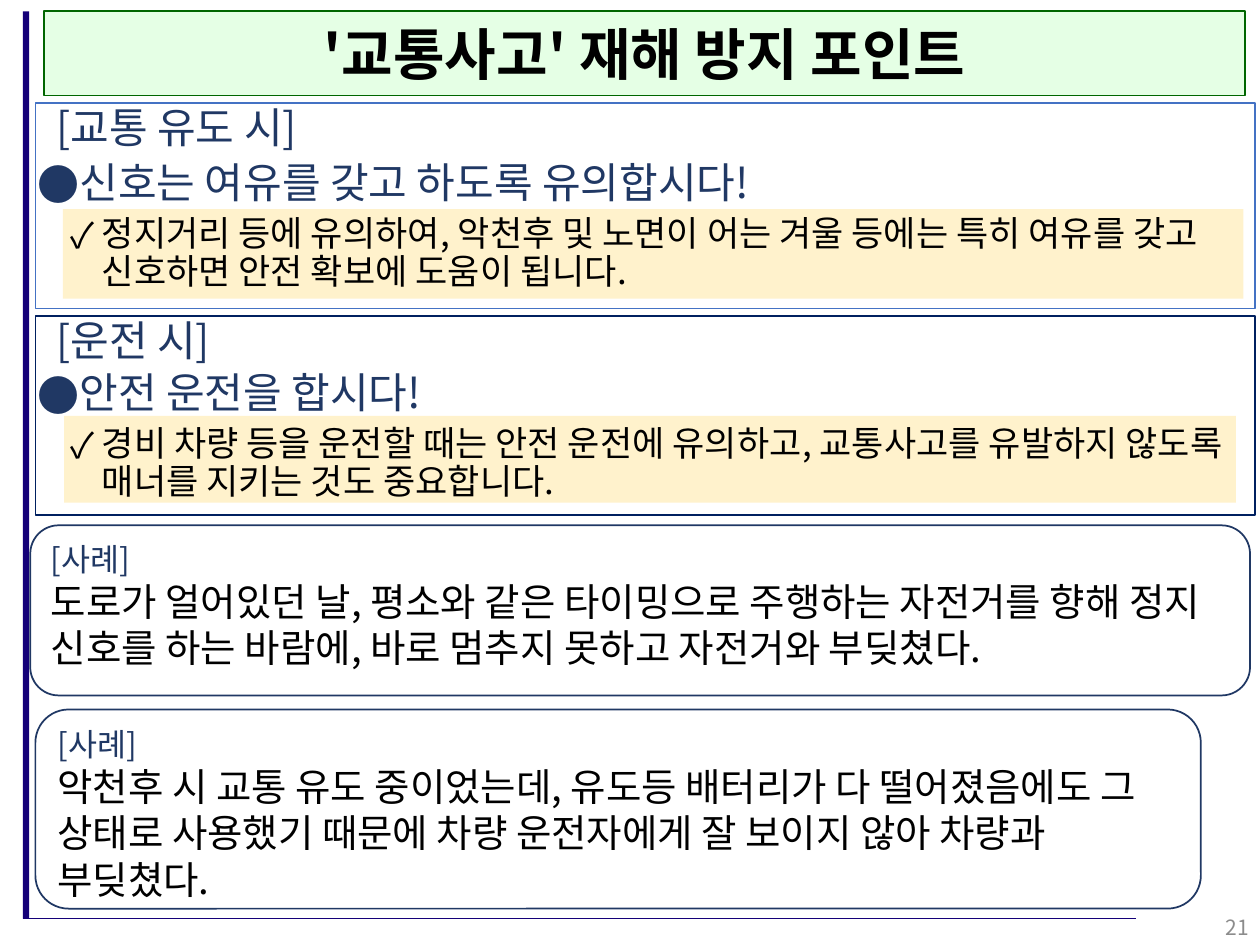
from lxml.etree import SubElement
from pptx import Presentation
from pptx.dml.color import RGBColor
from pptx.enum.shapes import MSO_CONNECTOR as Connector, MSO_SHAPE as Shape
from pptx.enum.text import MSO_ANCHOR as Anchor, PP_ALIGN as Align
from pptx.oxml.ns import qn
from pptx.util import Pt

FONT = "Noto Sans CJK JP"
BLACK = RGBColor(0x00, 0x00, 0x00)
WHITE = RGBColor(0xFF, 0xFF, 0xFF)
NAVY = RGBColor(0x20, 0x38, 0x64)
INDIGO = RGBColor(0x14, 0x00, 0x78)
CREAM = RGBColor(0xFF, 0xF2, 0xCC)
MINT = RGBColor(0xCC, 0xFF, 0xCC)
GREEN = RGBColor(0x00, 0x66, 0x00)
BLUE = RGBColor(0x44, 0x72, 0xC4)
DARK_BLUE = RGBColor(0x00, 0x20, 0x60)
GRAY = RGBColor(0x8C, 0x8C, 0x8C)

POINTS = [
    ("신호는 여유를 갖고 하도록 유의합시다!",
     "정지거리 등에 유의하여, 악천후 및 노면이 어는 겨울 등에는 특히 여유를 갖고 신호하면 안전 확보에 도움이 됩니다."),
    ("안전 운전을 합시다!",
     "경비 차량 등을 운전할 때는 안전 운전에 유의하고, 교통사고를 유발하지 않도록 매너를 지키는 것도 중요합니다."),
]
CASES = [
    ((17.3, 300.2, 697, 97.2),
     "도로가 얼어있던 날, 평소와 같은 타이밍으로 주행하는 자전거를 향해 정지 신호를 하는 바람에, 바로 멈추지 못하고 자전거와 부딪쳤다."),
    ((20.2, 405.4, 666, 113.8),
     "악천후 시 교통 유도 중이었는데, 유도등 배터리가 다 떨어졌음에도 그 상태로 사용했기 때문에 차량 운전자에게 잘 보이지 않아 차량과 부딪쳤다."),
]


def add_box(slide, box, kind=Shape.RECTANGLE, fill=None, line=None, alpha=None):
    sp = slide.shapes.add_shape(kind, *map(Pt, box))
    sp.shadow.inherit = False
    if fill is None:
        sp.fill.background()
    else:
        sp.fill.solid()
        sp.fill.fore_color.rgb = fill
    if alpha is not None:
        color = sp.fill._xPr.find(".//" + qn("a:srgbClr"))
        SubElement(color, qn("a:alpha"), val=str(alpha * 1000))
    if line is None:
        sp.line.fill.background()
    else:
        sp.line.color.rgb = line
        sp.line.width = Pt(1)
    return sp


def add_text_box(slide, box, anchor=Anchor.TOP):
    tf = slide.shapes.add_textbox(*map(Pt, box)).text_frame
    tf.word_wrap = True
    tf.vertical_anchor = anchor
    return tf


def write(tf, text, size, color=BLACK, bold=False, align=Align.LEFT,
          before=0, spacing=None, bullet=None, level=0, indent=0):
    p = tf.paragraphs[0] if not tf.text else tf.add_paragraph()
    p.alignment = align
    p.space_before = Pt(before)
    p.level = level
    if spacing:
        p.line_spacing = spacing
    if bullet:
        pPr = p._p.get_or_add_pPr()
        pPr.set("marL", str(Pt(indent)))
        pPr.set("indent", str(-Pt(18)))
        SubElement(pPr, qn("a:buFont"), typeface=FONT)
        SubElement(pPr, qn("a:buChar"), char=bullet)
    r = p.add_run()
    r.text = text
    r.font.name = FONT
    r.font.size = Pt(size)
    r.font.bold = bold
    r.font.color.rgb = color
    SubElement(r._r.get_or_add_rPr(), qn("a:ea"), typeface=FONT)


def add_rule(slide, x1, y1, x2, y2):
    line = slide.shapes.add_connector(Connector.STRAIGHT, *map(Pt, (x1, y1, x2, y2)))
    line.line.color.rgb = INDIGO
    line.line.width = Pt(1)
    SubElement(line._element.spPr, qn("a:effectLst"))


def add_title(slide):
    sp = add_box(slide, (25.2, 6.5, 686.2, 48.2), fill=MINT, line=GREEN, alpha=50)
    tf = sp.text_frame
    tf.word_wrap = True
    tf.vertical_anchor = Anchor.MIDDLE
    write(tf, "'교통사고' 재해 방지 포인트", 32, bold=True, align=Align.CENTER)


def add_points(slide):
    tf = add_text_box(slide, (14.4, 89.3, 697, 480.2))
    for (head, detail), before in zip(POINTS, (10, 46)):
        write(tf, head, 24, NAVY, before=before, spacing=0.9, bullet="●", indent=18)
        write(tf, detail, 20, before=5, spacing=0.9, bullet="✓", level=1, indent=36.7)


def add_case(slide, box, text):
    sp = add_box(slide, box, Shape.ROUNDED_RECTANGLE, fill=WHITE, line=NAVY)
    tf = sp.text_frame
    tf.word_wrap = True
    tf.vertical_anchor = Anchor.TOP
    write(tf, "[사례]", 18, NAVY)
    write(tf, text, 22)


def main():
    prs = Presentation()
    prs.slide_width, prs.slide_height = Pt(720), Pt(540)
    slide = prs.slides.add_slide(prs.slide_layouts[6])

    add_box(slide, (13, 6.5, 3.6, 518.4), fill=INDIGO)
    add_rule(slide, 13, 524.9, 649.4, 524.9)
    add_box(slide, (36, 119.5, 674.6, 51.1), fill=CREAM)
    add_box(slide, (36.7, 237.6, 669.6, 49.7), fill=CREAM)
    add_title(slide)
    add_points(slide)
    for box, text in CASES:
        add_case(slide, box, text)

    page = add_text_box(slide, (558.7, 515.5, 162, 28.8), Anchor.MIDDLE)
    write(page, "21", 12, GRAY, align=Align.RIGHT)

    for text, top, width in (("[교통 유도 시]", 54.7, 175.7), ("[운전 시]", 176.4, 158.4)):
        write(add_text_box(slide, (25.2, top, width, 36)), text, 24, NAVY)
    add_box(slide, (20.2, 59, 697, 117.4), line=BLUE)
    add_box(slide, (20.2, 180.7, 697, 113.8), line=DARK_BLUE)

    prs.save("out.pptx")


if __name__ == "__main__":
    main()
